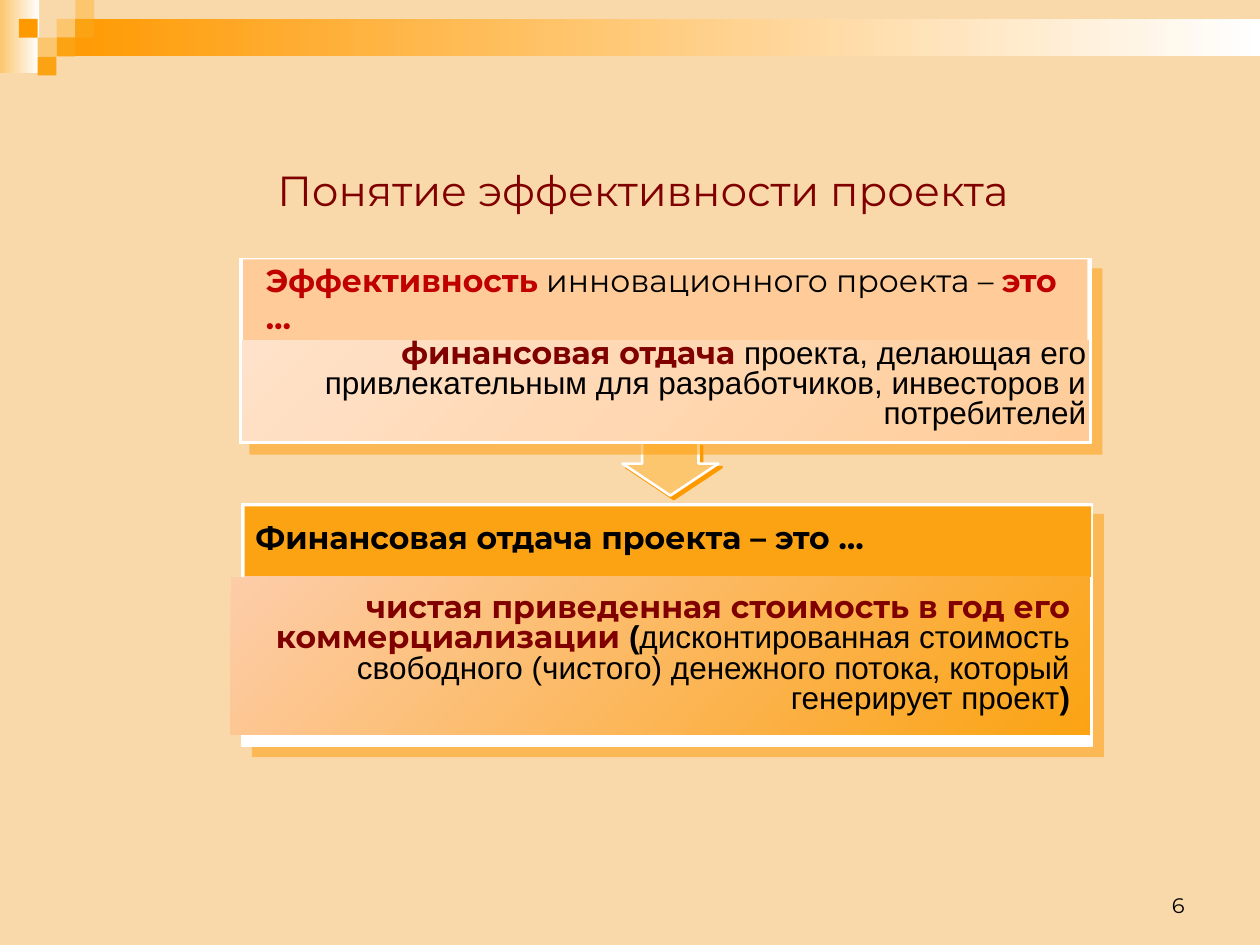
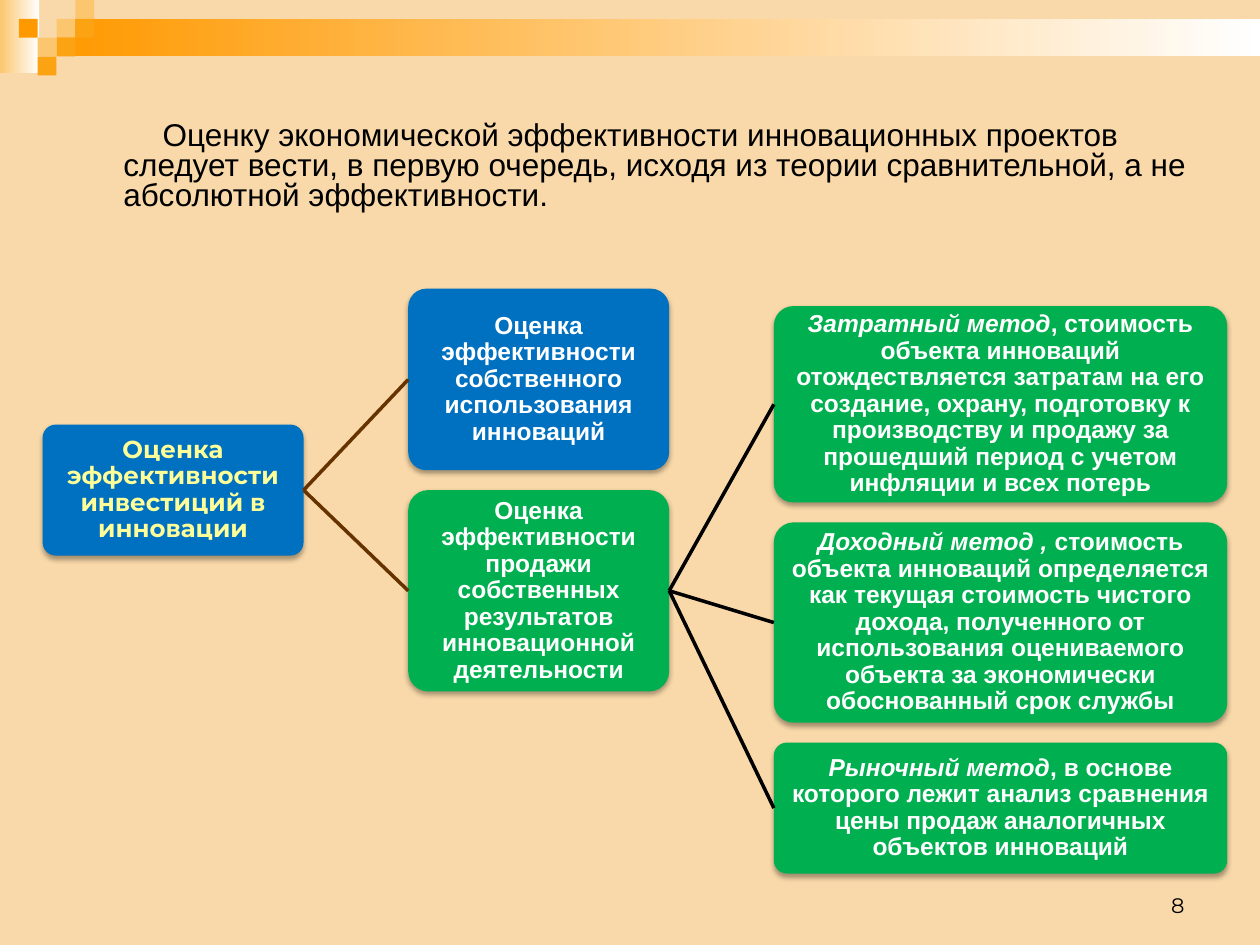
from lxml import etree
from pptx import Presentation
from pptx.dml.color import RGBColor
from pptx.enum.shapes import MSO_CONNECTOR, MSO_SHAPE
from pptx.enum.text import MSO_ANCHOR, PP_ALIGN
from pptx.oxml.ns import qn
from pptx.util import Cm, Pt

RECT, ROUND, ARROW = MSO_SHAPE.RECTANGLE, MSO_SHAPE.ROUNDED_RECTANGLE, MSO_SHAPE.DOWN_ARROW
LINE = MSO_CONNECTOR.STRAIGHT
LEFT, MID, RIGHT = PP_ALIGN.LEFT, PP_ALIGN.CENTER, PP_ALIGN.RIGHT
TOP, CENTER, BOTTOM = MSO_ANCHOR.TOP, MSO_ANCHOR.MIDDLE, MSO_ANCHOR.BOTTOM
LEFT_SIDE, RIGHT_SIDE = 1, 3

HUES = {
    "sand": "F9D9A9", "pale": "FCC66E", "amber": "FBA313", "orange": "FF9900",
    "peach": "FFCC99", "cream": "FFE2C9", "blush": "FDCDA9", "white": "FFFFFF",
    "black": "000000", "wine": "800000", "red": "C00000", "blue": "0070C0",
    "green": "00B050", "lemon": "FFFF99", "brown": "663300",
}
MONT, ARIAL = "Montserrat", "Arial"


def font(name, size, hue, bold=False, italic=False):
    return {"name": name, "size": Pt(size), "bold": bold, "italic": italic, "hue": hue}


FONTS = {
    "title": font(MONT, 24, "wine"),
    "page": font(MONT, 12, "black"),
    "plain": font(MONT, 18, "black"),
    "head": font(MONT, 18, "black", True),
    "key": font(MONT, 18, "wine", True),
    "alert": font(MONT, 18, "red", True),
    "body": font(ARIAL, 18, "black"),
    "strong": font(ARIAL, 18, "black", True),
    "root": font(MONT, 14, "lemon", True),
    "node": font(ARIAL, 14, "white", True),
    "term": font(ARIAL, 14, "white", True, True),
}
SHADES = {
    "panel": ("orange", 50, 0, 8.5, 45),
    "arrow": ("orange", 100, 0, 2.8, 45),
    "node": ("black", 35, 3.1, 1.8, 90),
}
SQUARES = [(3, 1, "pale"), (4, 0, "pale"), (4, 1, "amber"), (2, 2, "pale"),
           (1, 1, "orange"), (3, 2, "amber"), (2, 3, "amber")]
SIDE = 0.38
GAP = 0.4


def rgb(hue):
    return RGBColor.from_string(HUES[hue])


class Deck:
    def __init__(self):
        self.show = Presentation()
        self.show.slide_width, self.show.slide_height = Cm(25.4), Cm(19.05)
        self.slide = None

    def page(self, number):
        self.slide = self.show.slides.add_slide(self.show.slide_layouts[6])
        back = self.slide.background.fill
        back.solid()
        back.fore_color.rgb = rgb("sand")
        self.block((0, 0, 0.79, 1.47), ("pale", "white"))
        self.block((3 * SIDE, SIDE, 25.4 - 3 * SIDE, 2 * SIDE), ("orange", "white"))
        for col, row, hue in SQUARES:
            self.block((col * SIDE, row * SIDE, SIDE, SIDE), hue)
        self.text((18.21, 17.35, 5.92, 1.27), [(number, "page")], RIGHT, BOTTOM)

    def block(self, at, fill, kind=RECT, line=None, shade=None, adjust=(), angle=0):
        shape = self.slide.shapes.add_shape(kind, *map(Cm, at))
        for index, value in enumerate(adjust):
            shape.adjustments[index] = value
        if isinstance(fill, tuple):
            shape.fill.gradient()
            shape.fill.gradient_angle = angle
            for stop, hue in zip(shape.fill.gradient_stops, fill):
                stop.color.rgb = rgb(hue)
        else:
            shape.fill.solid()
            shape.fill.fore_color.rgb = rgb(fill)
        if line:
            shape.line.color.rgb = rgb("white")
            shape.line.width = Pt(line)
        else:
            shape.line.fill.background()
        shape.shadow.inherit = False
        if shade:
            self.shade(shape, *SHADES[shade])
        return shape

    def shade(self, shape, hue, alpha, blur, dist, turn):
        effects = shape.element.spPr.find(qn("a:effectLst"))
        outer = etree.SubElement(effects, qn("a:outerShdw"), {
            "blurRad": str(Pt(blur)), "dist": str(Pt(dist)),
            "dir": str(turn * 60000), "algn": "ctr", "rotWithShape": "0"})
        color = etree.SubElement(outer, qn("a:srgbClr"), val=HUES[hue])
        etree.SubElement(color, qn("a:alpha"), val=str(alpha * 1000))

    def words(self, frame, runs, align, anchor, space=1.0):
        frame.word_wrap = True
        frame.vertical_anchor = anchor
        par = frame.paragraphs[0]
        par.alignment = align
        par.line_spacing = space
        for words, style in runs:
            run = par.add_run()
            run.text = words
            for key, value in FONTS[style].items():
                if key == "hue":
                    run.font.color.rgb = rgb(value)
                else:
                    setattr(run.font, key, value)
        return par

    def text(self, at, runs, align=LEFT, anchor=TOP, space=1.0):
        box = self.slide.shapes.add_textbox(*map(Cm, at))
        return self.words(box.text_frame, runs, align, anchor, space)

    def panel(self, frame, head, body, fills):
        self.block(frame, "white", line=0.75, shade="panel")
        self.block(head, fills[1])
        self.block(body, fills, angle=315)

    def node(self, at, fill, runs):
        shape = self.block(at, fill, ROUND, shade="node", adjust=[0.1])
        frame = shape.text_frame
        for side in ("left", "top", "right", "bottom"):
            setattr(frame, "margin_" + side, Cm(0.03))
        self.words(frame, runs, MID, CENTER, 0.9)
        return shape

    def stack(self, left, top, width, items):
        nodes = []
        for height, fill, runs in items:
            nodes.append(self.node((left, top, width, height), fill, runs))
            top += height + GAP
        return nodes

    def fan(self, start, ends, hue):
        for end in ends:
            link = self.slide.shapes.add_connector(LINE, 0, 0, 0, 0)
            link.begin_connect(start, RIGHT_SIDE)
            link.end_connect(end, LEFT_SIDE)
            link.line.color.rgb = rgb(hue)
            link.line.width = Pt(2)
            etree.SubElement(link.element.spPr, qn("a:effectLst"))


def concept(deck):
    deck.page("6")
    deck.text((2.9, 3.03, 20.12, 1.57), [("Понятие эффективности проекта", "title")], MID, CENTER)
    deck.block((12.55, 8.92, 1.93, 1.07), "pale", ARROW, 1.5, "arrow", (0.589, 0.6))

    deck.panel((4.88, 10.16, 17.15, 4.88), (4.93, 10.21, 17.07, 1.42),
               (4.65, 11.63, 17.32, 3.18), ("blush", "amber"))
    deck.text((4.88, 11.86, 16.94, 3.73), [
        ("чистая приведенная стоимость в год его коммерциализации ", "key"),
        ("(", "strong"),
        ("дисконтированная стоимость свободного (чистого) денежного потока, "
         "который генерирует проект", "body"),
        (")", "strong")], RIGHT, space=0.8)
    deck.text((4.9, 10.31, 16.99, 1.02), [("Финансовая отдача проекта – это …", "head")])

    deck.panel((4.83, 5.21, 17.17, 3.73), (4.9, 5.23, 17.02, 1.7),
               (4.88, 6.86, 17.07, 2.03), ("cream", "peach"))
    deck.text((4.75, 6.73, 17.4, 2.11), [
        ("финансовая отдача ", "key"),
        ("проекта, делающая его привлекательным для разработчиков, "
         "инвесторов и потребителей", "body")], RIGHT, space=0.8)
    deck.text((5.11, 5.13, 16.48, 1.8), [
        ("Эффективность", "alert"), (" инновационного проекта – ", "plain"),
        ("это …", "alert")])


def methods(deck):
    deck.page("8")
    par = deck.text((1.27, 2.34, 23.5, 2.54), [
        ("Оценку экономической эффективности инновационных проектов следует вести, "
         "в первую очередь, исходя из теории сравнительной, а не абсолютной "
         "эффективности.", "body")], space=0.8)
    props = par._p.get_or_add_pPr()
    for key, value in {"marL": 0.97, "indent": 0.79}.items():
        props.set(key, str(Cm(value)))

    root = deck.node((0.86, 8.56, 5.26, 2.64), "blue", [
        ("Оценка эффективности инвестиций в инновации", "root")])
    uses = deck.stack(8.23, 5.82, 5.26, [
        (3.66, "blue", [
            ("Оценка эффективности собственного использования инноваций", "node")]),
        (4.06, "green", [
            ("Оценка эффективности продажи собственных результатов "
             "инновационной деятельности", "node")])])
    ways = deck.stack(15.6, 6.17, 9.14, [
        (3.96, "green", [
            ("Затратный метод", "term"),
            (", стоимость объекта инноваций отождествляется затратам на его создание, "
             "охрану, подготовку к производству и продажу за прошедший период "
             "с учетом инфляции и всех потерь", "node")]),
        (4.04, "green", [
            ("Доходный метод , ", "term"),
            ("стоимость объекта инноваций определяется как текущая стоимость чистого "
             "дохода, полученного от использования оцениваемого объекта "
             "за экономически обоснованный срок службы", "node")]),
        (2.64, "green", [
            ("Рыночный метод", "term"),
            (", в основе которого лежит анализ сравнения цены продаж "
             "аналогичных объектов инноваций", "node")])])
    deck.fan(root, uses, "brown")
    deck.fan(uses[1], ways, "black")


def main():
    deck = Deck()
    concept(deck)
    methods(deck)
    deck.show.save("out.pptx")


if __name__ == "__main__":
    main()
